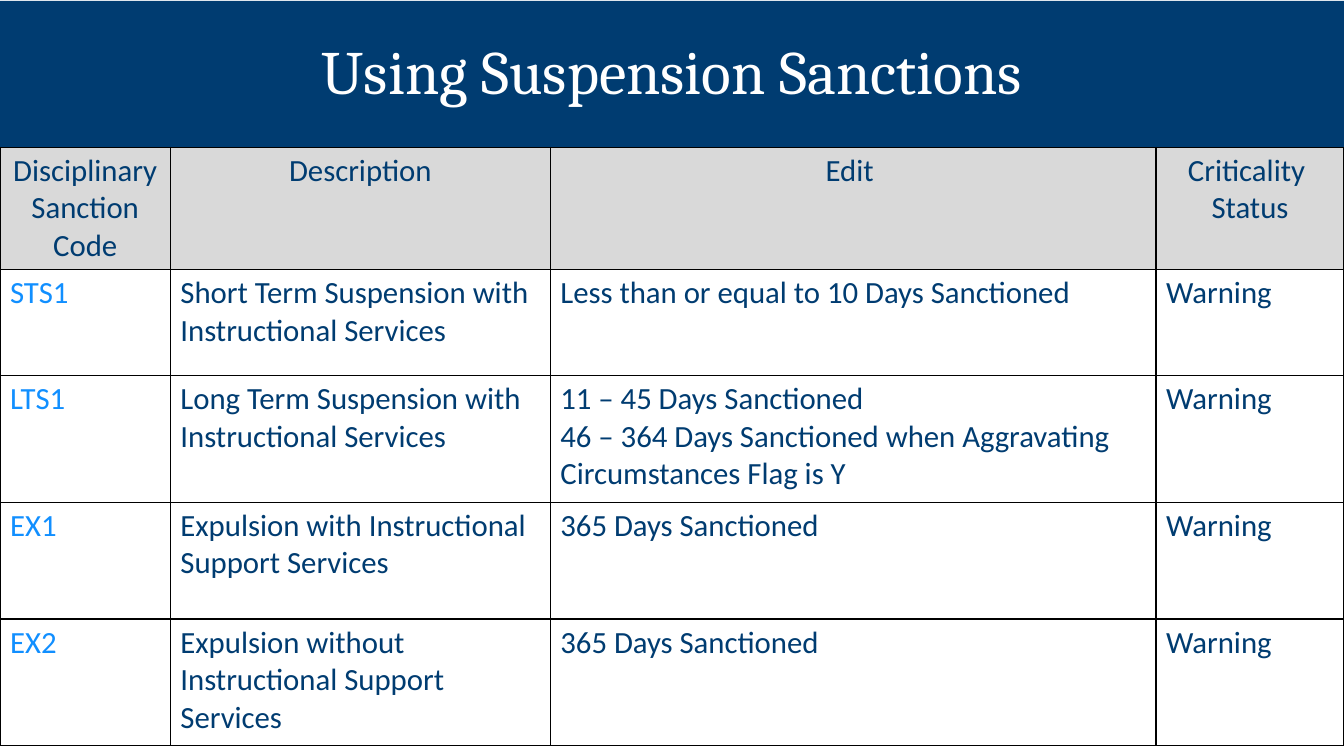
from lxml import etree
from pptx import Presentation
from pptx import util as u
from pptx.dml.color import RGBColor
from pptx.enum import shapes, text
from pptx.oxml import ns

NAVY = RGBColor(0x00, 0x3C, 0x71)
SKY = RGBColor(0x11, 0x8F, 0xFF)
GREY = RGBColor(0xD9, 0xD9, 0xD9)
WHITE = RGBColor(0xFF, 0xFF, 0xFF)
BLACK = RGBColor(0x00, 0x00, 0x00)

COLUMN_WIDTHS = [121.7, 271.4, 432.7, 134.2]
ROW_HEIGHTS = [87.5, 75.6, 90.5, 83.5, 90.5]
ROWS = [
    ["Disciplinary Sanction Code", "Description", "Edit ", "Criticality \nStatus"],
    ["STS1", "Short Term Suspension with Instructional Services",
     "Less than or equal to 10 Days Sanctioned", "Warning"],
    ["LTS1", "Long Term Suspension with Instructional Services",
     "11 – 45 Days Sanctioned\n"
     "46 – 364 Days Sanctioned when Aggravating Circumstances Flag is Y", "Warning"],
    ["EX1", "Expulsion with Instructional Support Services",
     "365 Days Sanctioned", "Warning"],
    ["EX2", "Expulsion without Instructional Support Services",
     "365 Days Sanctioned", "Warning"],
]


def add_run(para, words, font, size, color):
    span = para.add_run()
    span.text = words
    span.font.name = font
    span.font.size = u.Pt(size)
    span.font.color.rgb = color


def add_borders(cell):
    properties = cell._tc.get_or_add_tcPr()
    for position, side in enumerate(["lnL", "lnR", "lnT", "lnB"]):
        line = etree.Element(ns.qn(f"a:{side}"), w=str(u.Pt(1)))
        fill = etree.SubElement(line, ns.qn("a:solidFill"))
        etree.SubElement(fill, ns.qn("a:srgbClr"), val=str(BLACK))
        properties.insert(position, line)


deck = Presentation()
deck.slide_width = u.Pt(960)
deck.slide_height = u.Pt(540)
page = deck.slides.add_slide(deck.slide_layouts[6])

banner = page.shapes.add_shape(
    shapes.MSO_SHAPE.RECTANGLE, u.Pt(0), u.Pt(0.7), u.Pt(960), u.Pt(104.4))
banner.shadow.inherit = False
banner.fill.solid()
banner.fill.fore_color.rgb = NAVY
banner.line.fill.background()
banner.text_frame.word_wrap = True
banner.text_frame.vertical_anchor = text.MSO_ANCHOR.MIDDLE
title = banner.text_frame.paragraphs[0]
title.alignment = text.PP_ALIGN.CENTER
title.line_spacing = 0.9
add_run(title, "Using Suspension Sanctions", "Cambria", 44, WHITE)

frame = page.shapes.add_table(
    len(ROWS), len(COLUMN_WIDTHS), u.Pt(0), u.Pt(105.1),
    u.Pt(sum(COLUMN_WIDTHS)), u.Pt(sum(ROW_HEIGHTS)))
sanctions = frame.table
sanctions.first_row = False
sanctions.horz_banding = False
for column, width in zip(sanctions.columns, COLUMN_WIDTHS):
    column.width = u.Pt(width)

for r, (height, entries) in enumerate(zip(ROW_HEIGHTS, ROWS)):
    sanctions.rows[r].height = u.Pt(height)
    is_header = r == 0
    for c, entry in enumerate(entries):
        cell = sanctions.cell(r, c)
        if is_header:
            cell.fill.solid()
            cell.fill.fore_color.rgb = GREY
        else:
            cell.fill.background()
        add_borders(cell)
        color = SKY if c == 0 and not is_header else NAVY
        for i, words in enumerate(entry.split("\n")):
            para = cell.text_frame.add_paragraph() if i else cell.text_frame.paragraphs[0]
            para.alignment = text.PP_ALIGN.CENTER if is_header else text.PP_ALIGN.LEFT
            add_run(para, words, "Calibri", 22, color)

deck.save("out.pptx")
